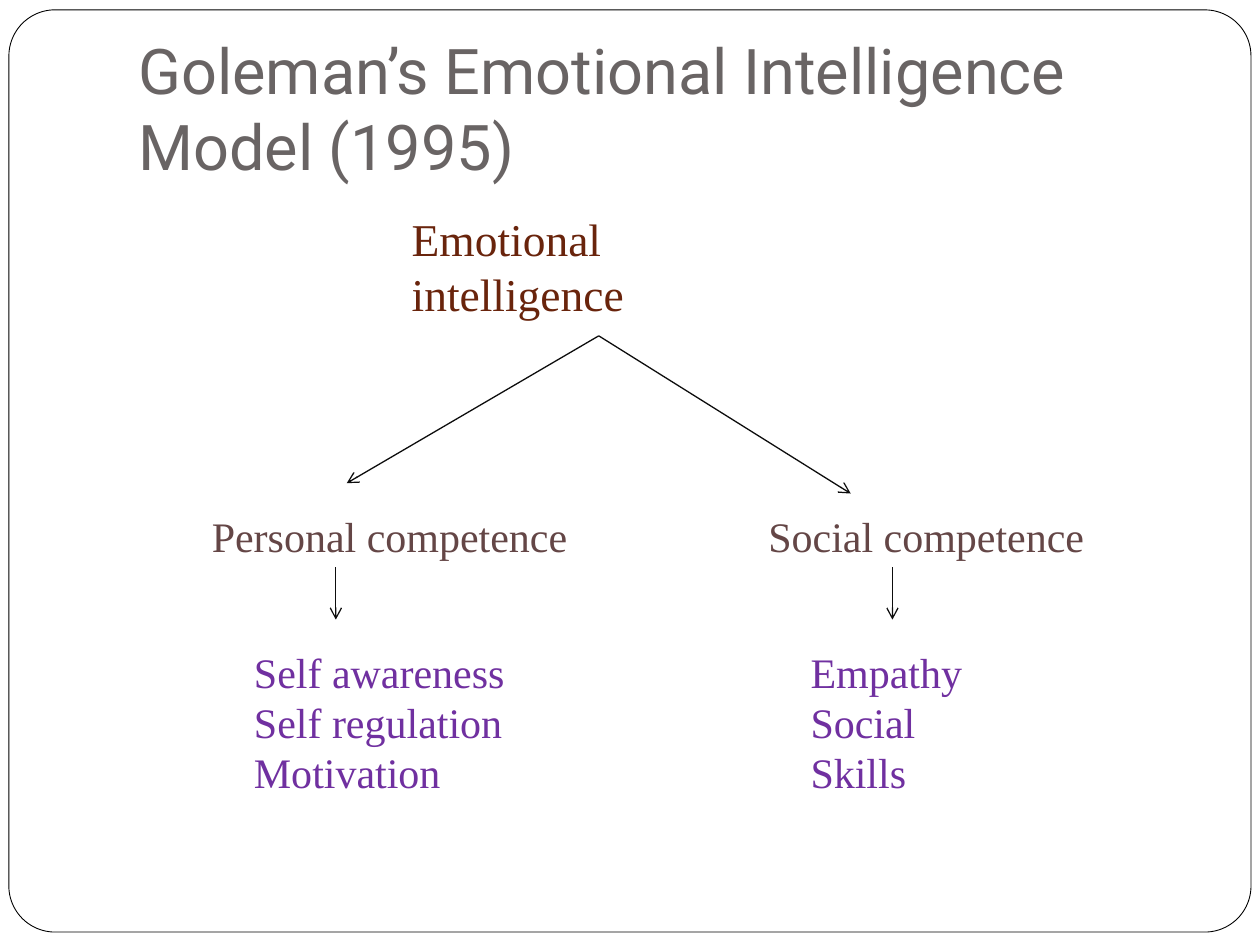
from lxml.etree import SubElement
from pptx import Presentation
from pptx.dml.color import RGBColor
from pptx.enum.shapes import MSO_CONNECTOR, MSO_SHAPE
from pptx.enum.text import MSO_ANCHOR
from pptx.oxml.ns import qn
from pptx.util import Cm, Pt

GREY = RGBColor(0x69, 0x64, 0x64)
BROWN = RGBColor(0x69, 0x24, 0x0C)
MAUVE = RGBColor(0x64, 0x46, 0x46)
PURPLE = RGBColor(0x70, 0x30, 0xA0)
INK = RGBColor(0x0D, 0x0D, 0x0D)
BLACK = RGBColor(0, 0, 0)
WHITE = RGBColor(255, 255, 255)

TITLE = "Goleman’s Emotional Intelligence Model (1995)"
ROOT = "Emotional intelligence"
# left edge, heading, heading width, skills, skills width, end of branch (cm)
BRANCHES = [
    (4.02, "Personal competence", 8.1,
     ["Self awareness", "Self regulation", "Motivation"], 5.8, (6.99, 9.74)),
    (15.24, "Social competence", 7.2,
     ["Empathy", "Social\vSkills"], 4.62, (17.15, 9.95)),
]
FORK = (12.07, 6.77)
HEADING_TOP, ARROW_TOP, ARROW_END, SKILLS_TOP = 10.16, 11.43, 12.49, 12.9
ARROW_INDENT, SKILLS_INDENT = 2.75, 0.85


def add_text(slide, paragraphs, x, y, w, h, *, size=24, color=BLACK,
             font="Times New Roman", wrap=False, anchor=MSO_ANCHOR.TOP, bottom=0.13):
    tf = slide.shapes.add_textbox(Cm(x), Cm(y), Cm(w), Cm(h)).text_frame
    tf.word_wrap = wrap
    tf.vertical_anchor = anchor
    tf.margin_bottom = Cm(bottom)
    for i, text in enumerate(paragraphs):
        p = tf.paragraphs[0] if i == 0 else tf.add_paragraph()
        p.text = text
        for r in p.runs:
            r.font.size = Pt(size)
            r.font.name = font
            r.font.color.rgb = color


def add_arrow(slide, start, end):
    points = [Cm(v) for v in (*start, *end)]
    s = slide.shapes.add_connector(MSO_CONNECTOR.STRAIGHT, *points)
    s.line.color.rgb = INK
    s.line.width = Pt(0.75)
    SubElement(s.line._get_or_add_ln(), qn("a:tailEnd"), type="arrow")
    SubElement(s._element.spPr, qn("a:effectLst"))


def add_frame(slide):
    s = slide.shapes.add_shape(MSO_SHAPE.ROUNDED_RECTANGLE,
                               Cm(0.18), Cm(0.2), Cm(25.04), Cm(18.59))
    s.adjustments[0] = 0.05
    s.shadow.inherit = False
    s.fill.solid()
    s.fill.fore_color.rgb = WHITE
    s.line.color.rgb = BLACK
    s.line.width = Pt(0.5)


def main():
    prs = Presentation()
    prs.slide_width, prs.slide_height = Cm(25.4), Cm(19.05)
    slide = prs.slides.add_slide(prs.slide_layouts[6])

    add_frame(slide)
    add_text(slide, [TITLE], 2.54, 0.76, 21.59, 3.18, size=36, color=GREY,
             font="Roboto", wrap=True, anchor=MSO_ANCHOR.BOTTOM, bottom=0.25)
    add_text(slide, [ROOT], 8.05, 4.13, 8.8, 1.3, size=26, color=BROWN)

    for x, heading, heading_w, skills, skills_w, branch_end in BRANCHES:
        add_arrow(slide, FORK, branch_end)
        add_text(slide, [heading], x, HEADING_TOP, heading_w, 1.27, color=MAUVE)
        arrow_x = x + ARROW_INDENT
        add_arrow(slide, (arrow_x, ARROW_TOP), (arrow_x, ARROW_END))
        add_text(slide, skills, x + SKILLS_INDENT, SKILLS_TOP, skills_w, 3.33,
                 color=PURPLE)

    prs.save("out.pptx")


if __name__ == "__main__":
    main()
